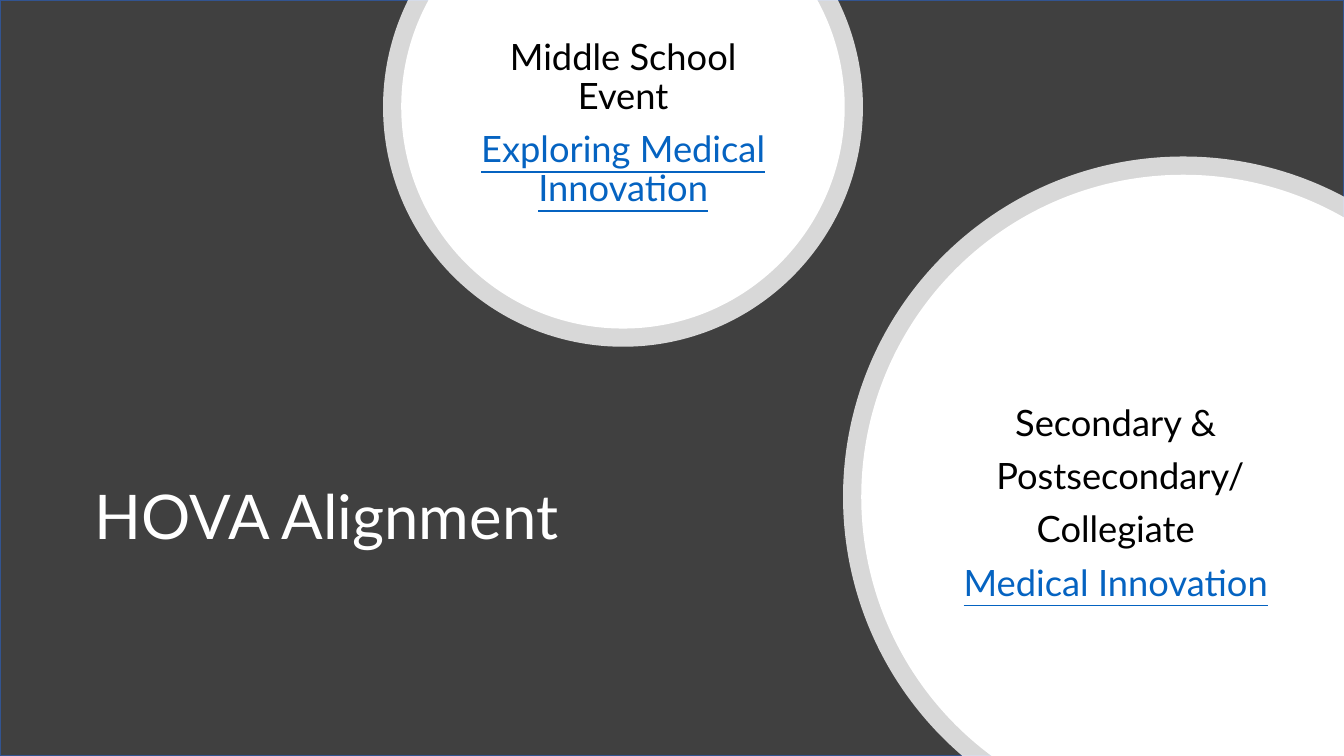
from itertools import pairwise
from math import acos, asin, cos, degrees, radians, sin, tan

from lxml import etree
from pptx import Presentation
from pptx import util as u
from pptx.dml.color import RGBColor
from pptx.enum import shapes, text
from pptx.oxml.ns import qn

WIDTH, HEIGHT = 960, 540
UNITS = 100


def rgb(value):
    return RGBColor.from_string(value)


def top_angles(cx, cy, r):
    a = degrees(asin(cy / r))
    return [-a, 0, 90, 180, 180 + a]


def corner_angles(cx, cy, r):
    return [180 - degrees(asin((HEIGHT - cy) / r)), 180, 270,
            360 - degrees(acos((WIDTH - cx) / r))]


class Deck:
    font = "Lato"
    dark, edge, white, black, link = "404040", "325491", "FFFFFF", "000000", "0563C1"

    def __init__(self):
        self.prs = Presentation()
        self.prs.slide_width, self.prs.slide_height = u.Pt(WIDTH), u.Pt(HEIGHT)
        self.slide = self.prs.slides.add_slide(self.prs.slide_layouts[5])

    def backdrop(self):
        sp = self.slide.shapes.add_shape(
            shapes.MSO_SHAPE.RECTANGLE, 0, 0, u.Pt(WIDTH), u.Pt(HEIGHT))
        sp.shadow.inherit = False
        sp.fill.solid()
        sp.fill.fore_color.rgb = rgb(self.dark)
        sp.line.color.rgb = rgb(self.edge)
        sp.line.width = u.Pt(1)

    def style(self, p, size, color):
        p.line_spacing = 0.9
        p.font.name = self.font
        p.font.size = u.Pt(size)
        p.font.color.rgb = rgb(color)

    def title(self, words, x, y, w, h):
        sp = self.slide.shapes.title
        self.slide.shapes._spTree.append(sp._element)
        sp.left, sp.top, sp.width, sp.height = map(u.Pt, (x, y, w, h))
        tf = sp.text_frame
        tf.text = words
        tf.word_wrap = True
        tf.auto_size = text.MSO_AUTO_SIZE.NONE
        tf.vertical_anchor = text.MSO_ANCHOR.MIDDLE
        p = tf.paragraphs[0]
        p.alignment = text.PP_ALIGN.LEFT
        self.style(p, 44, self.white)

    def clipped_circle(self, cx, cy, r, angles, corners, opacity=100):
        def at(a, along=0):
            a = radians(a)
            return (round((cx + r * (cos(a) - along * sin(a))) * UNITS),
                    round((cy + r * (sin(a) + along * cos(a))) * UNITS))

        anchors = [at(a) for a in angles]
        anchors += [(x * UNITS, y * UNITS) for x, y in corners]
        outline = self.slide.shapes.build_freeform(*anchors[0], scale=u.Pt(1) / UNITS)
        outline.add_line_segments(anchors[1:])
        sp = outline.convert_to_shape()
        left, top = map(min, zip(*anchors))
        lines = list(sp._element.iter(qn("a:lnTo")))
        for line, (a, b) in zip(lines, pairwise(angles)):
            pull = 4 / 3 * tan(radians(b - a) / 4)
            line.tag = qn("a:cubicBezTo")
            for i, (x, y) in enumerate((at(a, pull), at(b, -pull))):
                pt = etree.Element(qn("a:pt"), x=str(x - left), y=str(y - top))
                line.insert(i, pt)
        sp.shadow.inherit = False
        sp.line.fill.background()
        sp.fill.solid()
        sp.fill.fore_color.rgb = rgb(self.white)
        if opacity < 100:
            color = sp._element.spPr.find(qn("a:solidFill"))[0]
            etree.SubElement(color, qn("a:alpha")).set("val", str(opacity * 1000))

    def ringed_circle(self, cx, cy, radius, angles, corners=(), ring=13):
        for r, opacity in ((radius + ring, 80), (radius, 100)):
            self.clipped_circle(cx, cy, r, angles(cx, cy, r), corners, opacity)

    def event(self, lines, event_name, x, y, w, h, anchor, top, bottom):
        tf = self.slide.shapes.add_textbox(*map(u.Pt, (x, y, w, h))).text_frame
        tf.word_wrap = True
        tf.vertical_anchor = anchor
        tf.margin_top, tf.margin_bottom = u.Pt(top), u.Pt(bottom)
        for i, words in enumerate([*lines, event_name]):
            p = tf.add_paragraph() if i else tf.paragraphs[0]
            p.text = words
            p.alignment = text.PP_ALIGN.CENTER
            p.space_before = u.Pt(10)
            self.style(p, 25.9, self.black)
        p.font.color.rgb = rgb(self.link)
        p.font.underline = True


def main():
    deck = Deck()
    deck.backdrop()
    deck.title("HOVA Alignment", 60.5, 275.8, 477.6, 190.8)
    deck.ringed_circle(445, 76.3, 158.4, top_angles)
    deck.ringed_circle(845.4, 355, 230.2, corner_angles, [(WIDTH, HEIGHT)])
    deck.event(["Middle School Event"], "Exploring Medical Innovation",
               331.7, 27.8, 226.8, 141.1, text.MSO_ANCHOR.TOP, 0, 0)
    deck.event(["Secondary &", " Postsecondary/", "Collegiate"], "Medical Innovation",
               660.2, 247.4, 273.6, 218.9, text.MSO_ANCHOR.MIDDLE, 7.2, 0)
    deck.prs.save("out.pptx")


if __name__ == "__main__":
    main()
